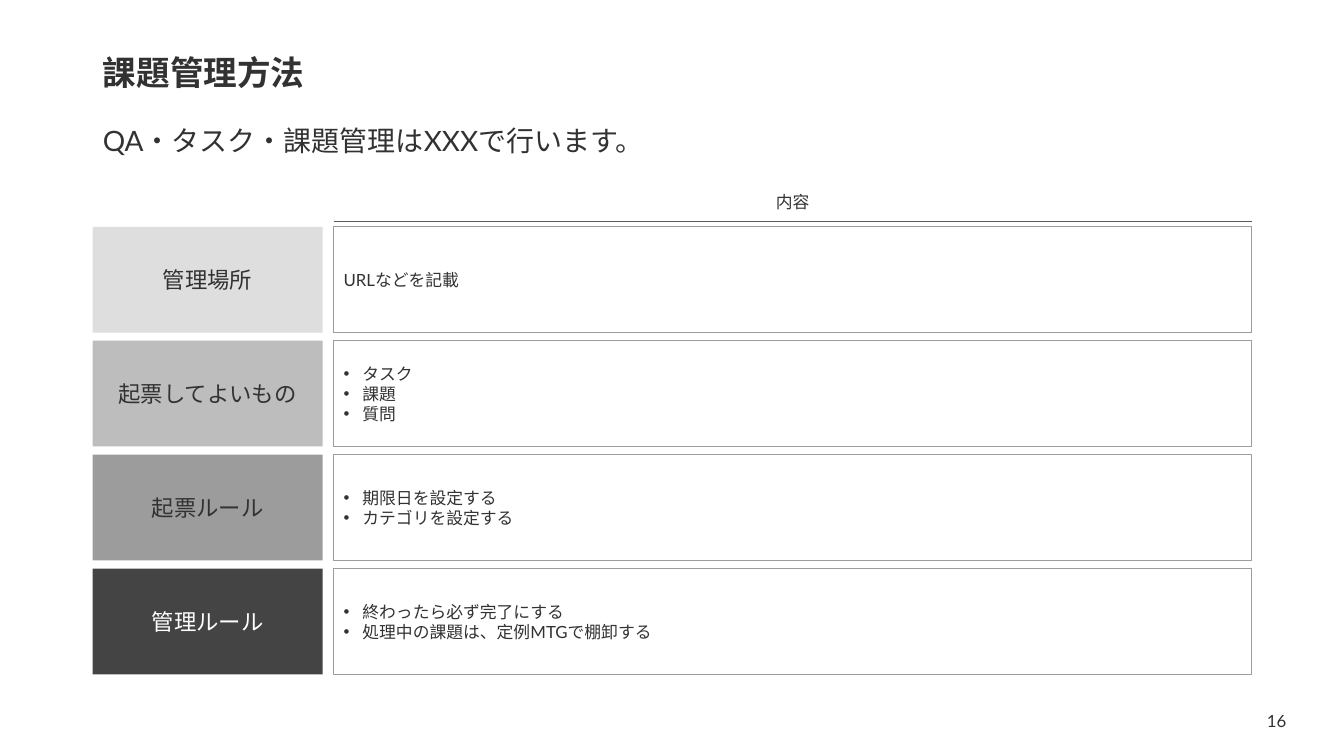
from lxml.etree import SubElement
from pptx import Presentation
from pptx.dml.color import RGBColor
from pptx.enum.shapes import MSO_CONNECTOR, MSO_SHAPE
from pptx.enum.text import MSO_ANCHOR, MSO_AUTO_SIZE, PP_ALIGN
from pptx.oxml.ns import qn
from pptx.util import Pt

FONT = "Lato"
COLORS = {
    "text": "323232",
    "white": "FFFFFF",
    "rule": "5A5A5A",
    "border": "9C9C9C",
    "place": "DEDEDE",
    "items": "BDBDBD",
    "entry": "9C9C9C",
    "manage": "444444",
}
ROWS = [
    ("管理場所", "place", "text", ["URLなどを記載"]),
    ("起票してよいもの", "items", "text", ["タスク", "課題", "質問"]),
    ("起票ルール", "entry", "text", ["期限日を設定する", "カテゴリを設定する"]),
    ("管理ルール", "manage", "white",
     ["終わったら必ず完了にする", "処理中の課題は、定例MTGで棚卸する"]),
]
LEFT, WIDTH = 66.24, 828
LABEL_WIDTH, COLUMN_GAP = 164.16, 7.92
ROW_HEIGHT, ROW_GAP = 75.6, 5.76
HEADER_HEIGHT, RULE_OFFSET, HEADER_SPACE = 21.6, 25.2, 28.8
BULLET_INDENT = 13.5


def color(name):
    return RGBColor.from_string(COLORS[name])


def set_bullet(para, mark=None):
    """Give the paragraph a hanging bullet, or none at all without a mark."""
    properties = para._p.get_or_add_pPr()
    indent = Pt(BULLET_INDENT) if mark else 0
    properties.set("marL", str(indent))
    properties.set("indent", str(-indent))
    if mark:
        SubElement(properties, qn("a:buFont")).set("typeface", "Arial")
        SubElement(properties, qn("a:buChar")).set("char", mark)
    else:
        SubElement(properties, qn("a:buNone"))


def write(shape, lines, size, align=PP_ALIGN.LEFT, ink="text", bold=False):
    """Fill the shape with one paragraph a line; several lines get bullets."""
    frame = shape.text_frame
    frame.word_wrap = True
    frame.auto_size = MSO_AUTO_SIZE.NONE
    frame.vertical_anchor = MSO_ANCHOR.MIDDLE
    frame.text = "\n".join(lines)
    for para in frame.paragraphs:
        set_bullet(para, "•" if len(lines) > 1 else None)
        para.alignment = align
        para.font.name = FONT
        para.font.size = Pt(size)
        para.font.bold = bold
        para.font.color.rgb = color(ink)


def place(shape, left, top, width, height):
    shape.left, shape.top = Pt(left), Pt(top)
    shape.width, shape.height = Pt(width), Pt(height)


def add_heading(page, left, top, width, height):
    """Stack the title and the lead sentence in two equal bands."""
    title, lead = page.shapes.title, page.placeholders[1]
    band = height / 2
    place(title, left, top, width, band)
    place(lead, left, top + band, width, band)
    write(title, ["課題管理方法"], 24, bold=True)
    write(lead, ["QA・タスク・課題管理はXXXで行います。"], 20)
    for shape in (title, lead):
        shape.text_frame.paragraphs[0].line_spacing = 0.9
    lead.text_frame.paragraphs[0].space_before = Pt(10)


def add_text(page, text, size, left, top, width, height):
    box = page.shapes.add_textbox(Pt(left), Pt(top), Pt(width), Pt(height))
    write(box, [text], size, PP_ALIGN.CENTER)


def add_box(page, left, top, width, height, fill=None):
    """Add a filled box without outline, or an outlined one without fill."""
    box = page.shapes.add_shape(
        MSO_SHAPE.RECTANGLE, Pt(left), Pt(top), Pt(width), Pt(height))
    box.shadow.inherit = False
    if fill:
        box.fill.solid()
        box.fill.fore_color.rgb = color(fill)
        box.line.fill.background()
    else:
        box.fill.background()
        box.line.color.rgb = color("border")
        box.line.width = Pt(0.5)
    return box


def add_column_header(page, left, top, width):
    add_text(page, "内容", 12, left, top, width, HEADER_HEIGHT)
    y = Pt(top + RULE_OFFSET)
    rule = page.shapes.add_connector(
        MSO_CONNECTOR.STRAIGHT, Pt(left), y, Pt(left + width), y)
    rule.line.color.rgb = color("rule")
    rule.line.width = Pt(0.5)
    SubElement(rule._element.spPr, qn("a:effectLst"))


def add_rule_grid(page, left, top, width):
    """Draw the column header and a label with its content for each row."""
    content_left = left + LABEL_WIDTH + COLUMN_GAP
    content_width = left + width - content_left
    add_column_header(page, content_left, top, content_width)
    for index, (label, fill, ink, lines) in enumerate(ROWS):
        row_top = top + HEADER_SPACE + index * (ROW_HEIGHT + ROW_GAP)
        label_box = add_box(page, left, row_top, LABEL_WIDTH, ROW_HEIGHT, fill)
        write(label_box, [label], 16, PP_ALIGN.CENTER, ink)
        content_box = add_box(
            page, content_left, row_top, content_width, ROW_HEIGHT)
        write(content_box, lines, 12)


def main():
    deck = Presentation()
    deck.slide_width, deck.slide_height = Pt(960), Pt(540)
    page = deck.slides.add_slide(deck.slide_layouts[1])
    add_heading(page, LEFT, 28.8, WIDTH, 97.2)
    add_rule_grid(page, LEFT, 133.2, WIDTH)
    add_text(page, "16", 12, LEFT + WIDTH, 500.4, 35.28, 28.8)
    deck.save("out.pptx")


if __name__ == "__main__":
    main()
